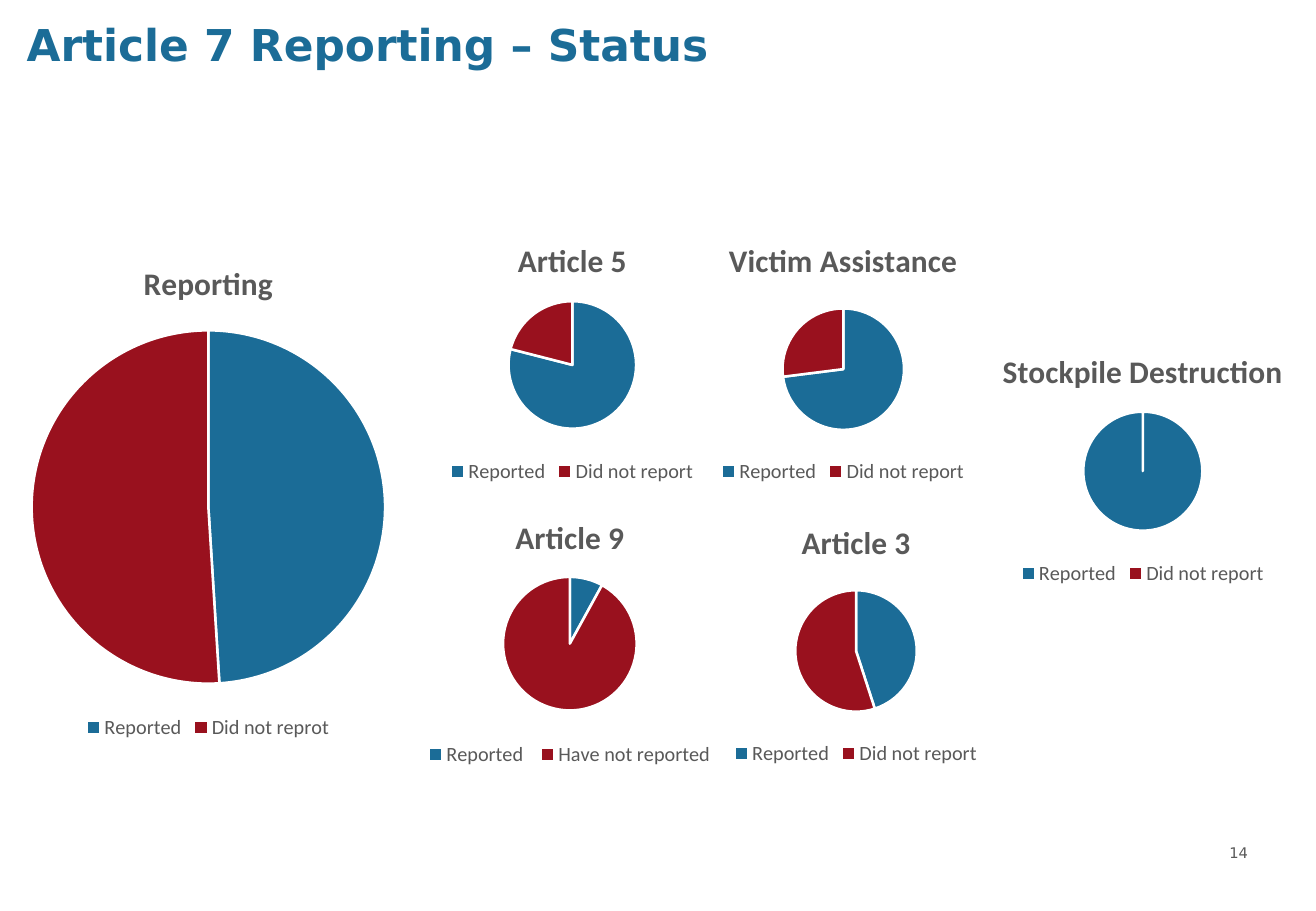
from dataclasses import dataclass

from lxml import etree
from pptx import Presentation
from pptx.chart.data import CategoryChartData
from pptx.dml.color import RGBColor
from pptx.enum.chart import XL_CHART_TYPE, XL_LEGEND_POSITION
from pptx.enum.text import MSO_ANCHOR, PP_ALIGN
from pptx.oxml.ns import qn
from pptx.slide import Slide
from pptx.util import Inches, Pt

PIE = XL_CHART_TYPE.PIE
BOTTOM = XL_LEGEND_POSITION.BOTTOM
MIDDLE, TOP = MSO_ANCHOR.MIDDLE, MSO_ANCHOR.TOP
LEFT, RIGHT = PP_ALIGN.LEFT, PP_ALIGN.RIGHT

BLUE = RGBColor(0x1B, 0x6C, 0x97)
RED = RGBColor(0x99, 0x11, 0x1E)
GREY = RGBColor(0x59, 0x59, 0x59)
WHITE = RGBColor(0xFF, 0xFF, 0xFF)
BLACK = RGBColor(0x00, 0x00, 0x00)

HEADING_FONT = "DejaVu Sans"
CHART_FONT = "Calibri"


@dataclass(frozen=True)
class Label:
    text: str
    box: tuple[float, float, float, float]
    inset: tuple[float, float]
    size: float
    color: RGBColor
    bold: bool
    align: PP_ALIGN
    anchor: MSO_ANCHOR


@dataclass(frozen=True)
class StatusPie:
    """Share of states that reported; pie_top and diameter are in inches."""
    title: str
    box: tuple[float, float, float, float]
    pie_top: float
    diameter: float
    reported: int
    reported_label: str = "Reported"
    missing_label: str = "Did not report"


LABELS = [
    Label("14", (9.67, 6.9, 0.7, 0.25), (0.1, 0.05), 8.7, GREY, False, RIGHT, TOP),
    Label("Article 7 Reporting – Status", (0.06, -0.03, 10.16, 0.78),
          (0.16, 0.08), 26, BLUE, True, LEFT, MIDDLE),
]

PIES = [
    StatusPie("Reporting", (-0.88, 1.97, 5.19, 4.16), 2.72, 2.91, 49,
              missing_label="Did not reprot"),
    StatusPie("Article 5", (2.9, 1.82, 3.62, 2.2), 2.48, 1.05, 79),
    StatusPie("Victim Assistance", (5.41, 1.82, 3.06, 2.2), 2.54, 1.0, 73),
    StatusPie("Stockpile Destruction", (7.87, 2.73, 3.07, 2.13), 3.39, 0.98, 100),
    StatusPie("Article 3", (5.41, 4.14, 3.27, 2.2), 4.86, 1.0, 45),
    StatusPie("Article 9", (2.88, 4.1, 3.62, 2.25), 4.75, 1.1, 8,
              reported_label="Reported ", missing_label="Have not reported"),
]


def add_label(slide: Slide, label: Label) -> None:
    frame = slide.shapes.add_textbox(*map(Inches, label.box)).text_frame
    frame.word_wrap = True
    frame.vertical_anchor = label.anchor
    frame.margin_left = frame.margin_right = Inches(label.inset[0])
    frame.margin_top = frame.margin_bottom = Inches(label.inset[1])
    frame.text = label.text
    paragraph = frame.paragraphs[0]
    paragraph.alignment = label.align
    style_font(paragraph.runs[0].font, HEADING_FONT, label.size, label.color, label.bold)


def style_font(font, name: str, size: float, color: RGBColor, bold: bool = False) -> None:
    font.name = name
    font.size = Pt(size)
    font.bold = bold
    font.color.rgb = color


def place_pie(chart, pie: StatusPie) -> None:
    """Fix the plot area: centred across the chart, at the pie's own top."""
    _, top, width, height = pie.box
    plot_area = chart.plots[0]._element.getparent()
    layout = plot_area.find(qn("c:layout"))
    if layout is None:
        layout = etree.Element(qn("c:layout"))
        plot_area.insert(0, layout)
    manual = etree.SubElement(layout, qn("c:manualLayout"))
    settings = {
        "layoutTarget": "inner",
        "xMode": "edge",
        "yMode": "edge",
        "x": (width - pie.diameter) / 2 / width,
        "y": (pie.pie_top - top) / height,
        "w": pie.diameter / width,
        "h": pie.diameter / height,
    }
    for tag, value in settings.items():
        etree.SubElement(manual, qn(f"c:{tag}")).set("val", str(value))


def add_status_pie(slide: Slide, pie: StatusPie) -> None:
    data = CategoryChartData()
    data.categories = [pie.reported_label, pie.missing_label]
    data.add_series("Series 1", [pie.reported, 100 - pie.reported])
    chart = slide.shapes.add_chart(PIE, *map(Inches, pie.box), data).chart
    style_font(chart.font, CHART_FONT, 10, BLACK)

    chart.has_title = True
    title = chart.chart_title.text_frame
    title.text = pie.title
    style_font(title.paragraphs[0].runs[0].font, CHART_FONT, 18.6, GREY, True)
    chart.chart_title.include_in_layout = False

    chart.has_legend = True
    chart.legend.position = BOTTOM
    chart.legend.include_in_layout = False
    style_font(chart.legend.font, CHART_FONT, 12, GREY)

    plot = chart.plots[0]
    plot.vary_by_categories = True
    for index, color in enumerate((BLUE, RED)):
        slice_format = plot.series[0].points[index].format
        slice_format.fill.solid()
        slice_format.fill.fore_color.rgb = color
        slice_format.line.color.rgb = WHITE
        slice_format.line.width = Pt(1.5)
    place_pie(chart, pie)


def main() -> None:
    presentation = Presentation()
    presentation.slide_width = Inches(10.83)
    presentation.slide_height = Inches(7.5)
    slide = presentation.slides.add_slide(presentation.slide_layouts[6])
    for label in LABELS:
        add_label(slide, label)
    for pie in PIES:
        add_status_pie(slide, pie)
    presentation.save("out.pptx")


if __name__ == "__main__":
    main()
